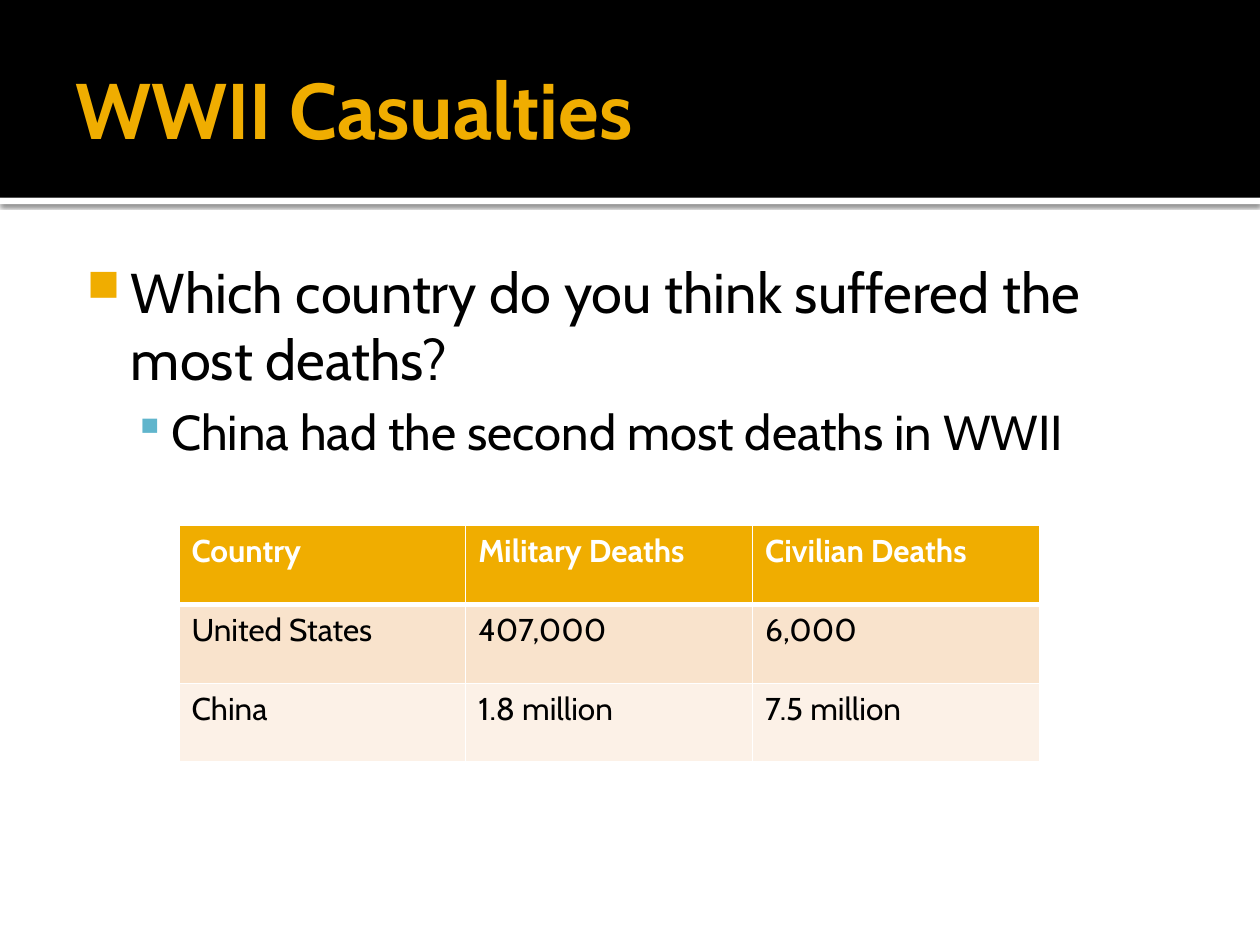
from lxml import etree
from pptx import Presentation
from pptx import util as u
from pptx.dml.color import RGBColor
from pptx.enum import shapes, text
from pptx.oxml.ns import qn

FONT = "Cabin"
COLORS = {"black": "000000", "white": "FFFFFF", "gold": "F0AD00",
          "blue": "60B5CC", "band1": "F9E3CC", "band2": "FCF1E7"}
TITLE = "WWII Casualties"
BULLETS = [
    dict(text="Which country do you think suffered the most deaths?", size=32,
         margin=0.48, indent=-0.35, char="■", color="gold", pct=80, before=0),
    dict(text="China had the second most deaths in WWII", size=28,
         margin=0.8, indent=-0.3, char="▪", color="blue", pct=90, before=5.6),
]
CASUALTIES = [
    ("Country", "Military Deaths", "Civilian Deaths"),
    ("United States", "407,000", "6,000"),
    ("China", "1.8 million", "7.5 million"),
]
ROW_FILLS = ["gold", "band1", "band2"]


def rgb(name):
    return RGBColor.from_string(COLORS[name])


def sub(parent, tag, **attrs):
    return etree.SubElement(parent, qn(tag), {k: str(v) for k, v in attrs.items()})


def style(p, size, color="black", bold=False):
    p.font.name, p.font.size, p.font.bold = FONT, u.Pt(size), bold
    p.font.color.rgb = rgb(color)


def add_band(s, top, height, color):
    sp = s.shapes.add_shape(shapes.MSO_SHAPE.RECTANGLE, 0, u.Inches(top),
                            u.Inches(10), u.Inches(height))
    sp.shadow.inherit = False
    sp.fill.solid()
    sp.fill.fore_color.rgb = rgb(color)
    sp.line.fill.background()
    return sp


def add_shadow(sp):
    effects = sp.element.spPr.find(qn("a:effectLst"))
    shadow = sub(effects, "a:outerShdw", blurRad=u.Pt(2.5), dist=u.Pt(0.8),
                 dir=90 * 60000, algn="t", rotWithShape=0)
    color = sub(shadow, "a:srgbClr", val=COLORS["black"])
    sub(color, "a:alpha", val=60000)


def add_text(s, box, insets, anchor):
    tf = s.shapes.add_textbox(*map(u.Inches, box)).text_frame
    tf.word_wrap = True
    tf.vertical_anchor = anchor
    (tf.margin_left, tf.margin_top,
     tf.margin_right, tf.margin_bottom) = map(u.Inches, insets)
    return tf


def add_bullet(p, item):
    p.text = item["text"]
    style(p, item["size"])
    p.space_before = u.Pt(item["before"])
    pPr = p._p.get_or_add_pPr()
    pPr.set("marL", str(u.Inches(item["margin"])))
    pPr.set("indent", str(u.Inches(item["indent"])))
    marks = [etree.Element(qn(t)) for t in ("a:buClr", "a:buSzPct", "a:buChar")]
    sub(marks[0], "a:srgbClr", val=COLORS[item["color"]])
    marks[1].set("val", str(item["pct"] * 1000))
    marks[2].set("char", item["char"])
    at = len(pPr) - len(pPr.findall(qn("a:defRPr")))
    pPr[at:at] = marks


def add_borders(cell, row):
    widths = {"L": 1, "R": 1, "T": 3 if row == 1 else 1, "B": 3 if row == 0 else 1}
    for side, width in widths.items():
        ln = sub(cell._tc.get_or_add_tcPr(), f"a:ln{side}", w=u.Pt(width))
        sub(sub(ln, "a:solidFill"), "a:srgbClr", val=COLORS["white"])


def add_casualties(s):
    rows, cols = len(CASUALTIES), len(CASUALTIES[0])
    table = s.shapes.add_table(rows, cols, *map(u.Inches, (1.42, 4.17, 6.83, 1.88))).table
    for r, values in enumerate(CASUALTIES):
        for c, value in enumerate(values):
            cell = table.cell(r, c)
            cell.text = value
            style(cell.text_frame.paragraphs[0], 18, "black" if r else "white", r == 0)
            add_borders(cell, r)
            cell.fill.solid()
            cell.fill.fore_color.rgb = rgb(ROW_FILLS[r])


def main():
    prs = Presentation()
    prs.slide_width, prs.slide_height = u.Inches(10), u.Inches(7.5)
    s = prs.slides.add_slide(prs.slide_layouts[6])
    add_shadow(add_band(s, 1.57, 0.05, "white"))
    add_band(s, 0, 1.57, "black")

    tf = add_text(s, (0.5, 0.17, 9, 1.37), (0.1, 0.05, 0.05, 0.05), text.MSO_ANCHOR.MIDDLE)
    tf.text = TITLE
    style(tf.paragraphs[0], 45, "gold", True)

    tf = add_text(s, (0.5, 1.94, 9, 5.06), (0.06, 0.1, 0.1, 0.05), text.MSO_ANCHOR.TOP)
    for i, item in enumerate(BULLETS):
        add_bullet(tf.add_paragraph() if i else tf.paragraphs[0], item)

    add_casualties(s)
    prs.save("out.pptx")


if __name__ == "__main__":
    main()
